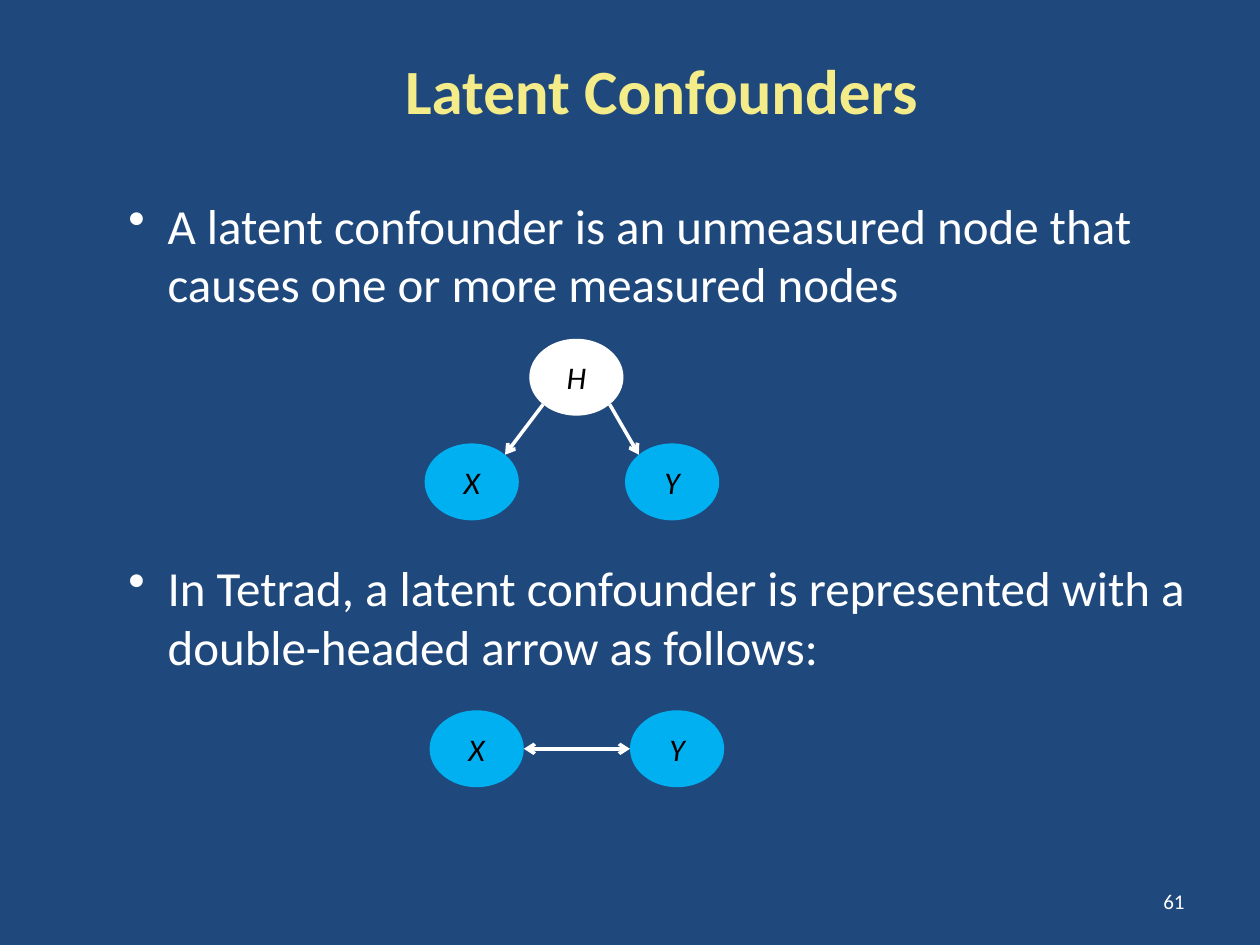
from math import sqrt

from pptx import Presentation
from pptx.dml.color import RGBColor
from pptx.enum.shapes import MSO_CONNECTOR, MSO_SHAPE
from pptx.enum.text import MSO_ANCHOR, PP_ALIGN
from pptx.oxml.ns import qn
from pptx.util import Cm, Pt

NAVY = RGBColor(0x1F, 0x49, 0x7D)
YELLOW = RGBColor(0xF4, 0xEC, 0x88)
CYAN = RGBColor(0x00, 0xB0, 0xF0)
WHITE = RGBColor(0xFF, 0xFF, 0xFF)
BLACK = RGBColor(0x00, 0x00, 0x00)

STRAIGHT = MSO_CONNECTOR.STRAIGHT
OVAL = MSO_SHAPE.OVAL
TOP, MIDDLE = MSO_ANCHOR.TOP, MSO_ANCHOR.MIDDLE
LEFT, CENTER, RIGHT = PP_ALIGN.LEFT, PP_ALIGN.CENTER, PP_ALIGN.RIGHT

FONT = "Calibri"
NODE_W, NODE_H = 1.9, 1.55
PITCH = 4.04  # from the left edge of X to that of Y
DIAG = 1 / sqrt(2)

POINTS = [
    "A latent confounder is an unmeasured node that causes one or more measured nodes",
    "In Tetrad, a latent confounder is represented with a double-headed arrow as follows:",
]


def write(para, text, size, color, align=LEFT, bold=False, italic=False):
    para.alignment = align
    run = para.add_run()
    run.text = text
    font = run.font
    font.name, font.size, font.bold, font.italic = FONT, Pt(size), bold, italic
    font.color.rgb = color


def add_box(slide, box, anchor):
    frame = slide.shapes.add_textbox(*map(Cm, box)).text_frame
    frame.word_wrap = True
    frame.vertical_anchor = anchor
    return frame


def add_line(slide, box, text, size, color, align, bold=False):
    frame = add_box(slide, box, MIDDLE)
    write(frame.paragraphs[0], text, size, color, align, bold)


def add_bullets(slide, box, points, gap):
    frame = add_box(slide, box, TOP)
    for i, text in enumerate(points):
        para = frame.add_paragraph() if i else frame.paragraphs[0]
        props = para._p.get_or_add_pPr()
        props.set("marL", str(Cm(2.06)))
        props.set("indent", str(-Cm(0.79)))
        mark = props.makeelement(qn("a:buChar"), {"char": "•"})
        props.append(mark)
        para.space_before = Pt(gap if i else 0)
        write(para, text, 28, WHITE)


def add_node(slide, x, y, name, color):
    node = slide.shapes.add_shape(OVAL, Cm(x), Cm(y), Cm(NODE_W), Cm(NODE_H))
    node.shadow.inherit = False
    node.fill.solid()
    node.fill.fore_color.rgb = color
    node.line.fill.background()
    frame = node.text_frame
    frame.vertical_anchor = MIDDLE
    write(frame.paragraphs[0], name, 18, BLACK, CENTER, italic=True)
    return node


def rim(node, dx, dy):
    """Point on the node's edge in the direction of the unit vector (dx, dy)."""
    return (int(node.left + node.width * (1 + dx) / 2),
            int(node.top + node.height * (1 + dy) / 2))


def add_arrow(slide, start, end, ends=("tailEnd",)):
    arrow = slide.shapes.add_connector(STRAIGHT, *start, *end)
    arrow.line.color.rgb = WHITE
    arrow.line.width = Pt(2)
    props = arrow._element.spPr
    line = props.find(qn("a:ln"))
    for name in ends:
        line.append(line.makeelement(qn("a:" + name), {"type": "arrow"}))
    props.append(props.makeelement(qn("a:effectLst"), {}))


def add_pair(slide, x, y):
    return (add_node(slide, x, y, "X", CYAN),
            add_node(slide, x + PITCH, y, "Y", CYAN))


def draw_latent(slide, x, y):
    """H above X and Y, with an arrow to each."""
    left, right = add_pair(slide, x, y + 2.11)
    top = add_node(slide, x + 2.11, y, "H", WHITE)
    for node, side in ((left, -DIAG), (right, DIAG)):
        add_arrow(slide, rim(top, side, DIAG), rim(node, -side, -DIAG))


def draw_double(slide, x, y):
    left, right = add_pair(slide, x, y)
    add_arrow(slide, rim(left, 1, 0), rim(right, -1, 0), ("headEnd", "tailEnd"))


def main():
    deck = Presentation()
    deck.slide_width, deck.slide_height = Cm(25.4), Cm(19.05)
    slide = deck.slides.add_slide(deck.slide_layouts[6])
    fill = slide.background.fill
    fill.solid()
    fill.fore_color.rgb = NAVY

    add_line(slide, (1.27, 0.64, 24.13, 2.34), "Latent Confounders", 36, YELLOW, CENTER, True)
    add_bullets(slide, (1.07, 3.81, 24.33, 10.4), POINTS, 140)
    draw_latent(slide, 8.56, 6.83)
    draw_double(slide, 8.66, 14.32)
    add_line(slide, (18.21, 17.65, 5.92, 1.02), "61", 12, WHITE, RIGHT)

    deck.save("out.pptx")


if __name__ == "__main__":
    main()
